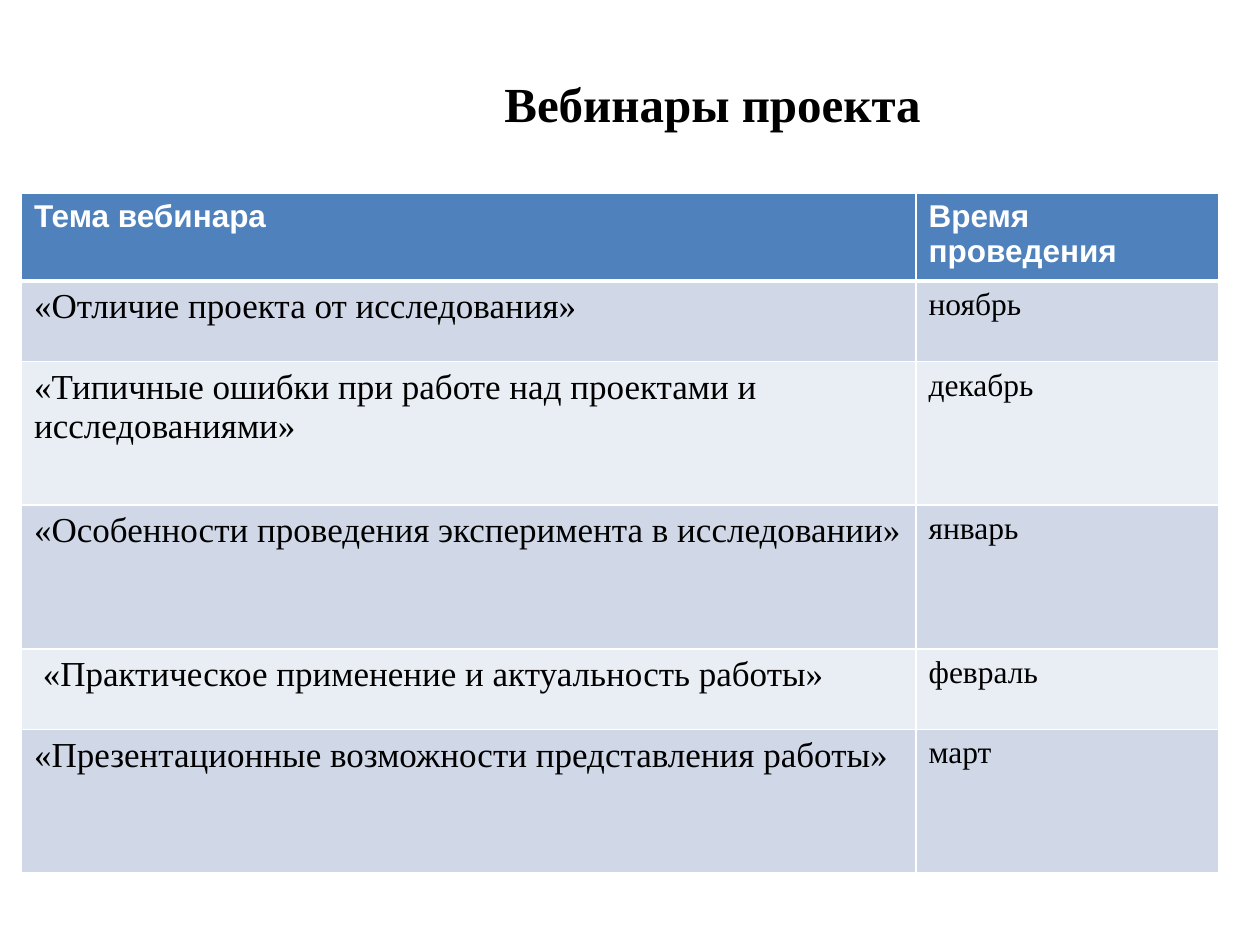
from lxml import etree
from pptx import Presentation
from pptx import util as u
from pptx.dml.color import RGBColor
from pptx.enum import text
from pptx.oxml.ns import qn

TITLE = "Вебинары проекта"
ROWS = [
    ("Тема вебинара", "Время проведения"),
    ("«Отличие проекта от исследования»", "ноябрь"),
    ("«Типичные ошибки при работе над проектами и исследованиями»", "декабрь"),
    ("«Особенности проведения эксперимента в исследовании»", "январь"),
    (" «Практическое применение и актуальность работы»", "февраль"),
    ("«Презентационные возможности представления работы»", "март"),
]
COLORS = {"head": "4F81BD", "odd": "D0D8E8", "even": "E9EDF4",
          "ink": "000000", "line": "FFFFFF"}
SERIF, SANS = "Times New Roman", "Arial"
WIDE, HIGH = 10, 7.5
COLS = [7.1, 2.4]
SHORT, TALL = 0.64, 1.14
TALLS = [0.6, SHORT, TALL, TALL, SHORT, TALL]


def style(par, face, size, color, bold):
    font = par.font
    font.name, font.size, font.bold = face, u.Pt(size), bold
    font.color.rgb = RGBColor.from_string(COLORS[color])


def border(cell, row):
    props = cell._tc.get_or_add_tcPr()
    thick = {"B": row == 0, "T": row == 1}
    for side in "LRTB":
        width = u.Pt(3 if thick.get(side) else 1)
        line = etree.SubElement(props, qn(f"a:ln{side}"), w=str(width))
        fill = etree.SubElement(line, qn("a:solidFill"))
        etree.SubElement(fill, qn("a:srgbClr"), val=COLORS["line"])


def title(slide):
    box = slide.shapes.add_textbox(*map(u.Inches, (1.56, 0.37, 8.19, 0.89)))
    frame = box.text_frame
    frame.word_wrap = True
    frame.vertical_anchor = text.MSO_ANCHOR.MIDDLE
    par = frame.paragraphs[0]
    par.text = TITLE
    par.alignment = text.PP_ALIGN.CENTER
    style(par, SERIF, 28, "ink", True)


def table(slide):
    area = map(u.Inches, (0.17 / 10 * WIDE, 1.53, sum(COLS), sum(TALLS)))
    grid = slide.shapes.add_table(len(ROWS), len(COLS), *area).table
    for col, width in zip(grid.columns, COLS):
        col.width = u.Inches(width)
    for r, (row, tall) in enumerate(zip(ROWS, TALLS)):
        grid.rows[r].height = u.Inches(tall)
        band = "head" if r == 0 else "odd" if r % 2 else "even"
        for c, words in enumerate(row):
            cell = grid.cell(r, c)
            border(cell, r)
            cell.fill.solid()
            cell.fill.fore_color.rgb = RGBColor.from_string(COLORS[band])
            par = cell.text_frame.paragraphs[0]
            par.text = words
            if r == 0:
                style(par, SANS, 18, "line", True)
            else:
                style(par, SERIF, 18 if c else 20, "ink", False)


def main():
    deck = Presentation()
    deck.slide_width, deck.slide_height = u.Inches(WIDE), u.Inches(HIGH)
    slide = deck.slides.add_slide(deck.slide_layouts[6])
    title(slide)
    table(slide)
    deck.save("out.pptx")


if __name__ == "__main__":
    main()
